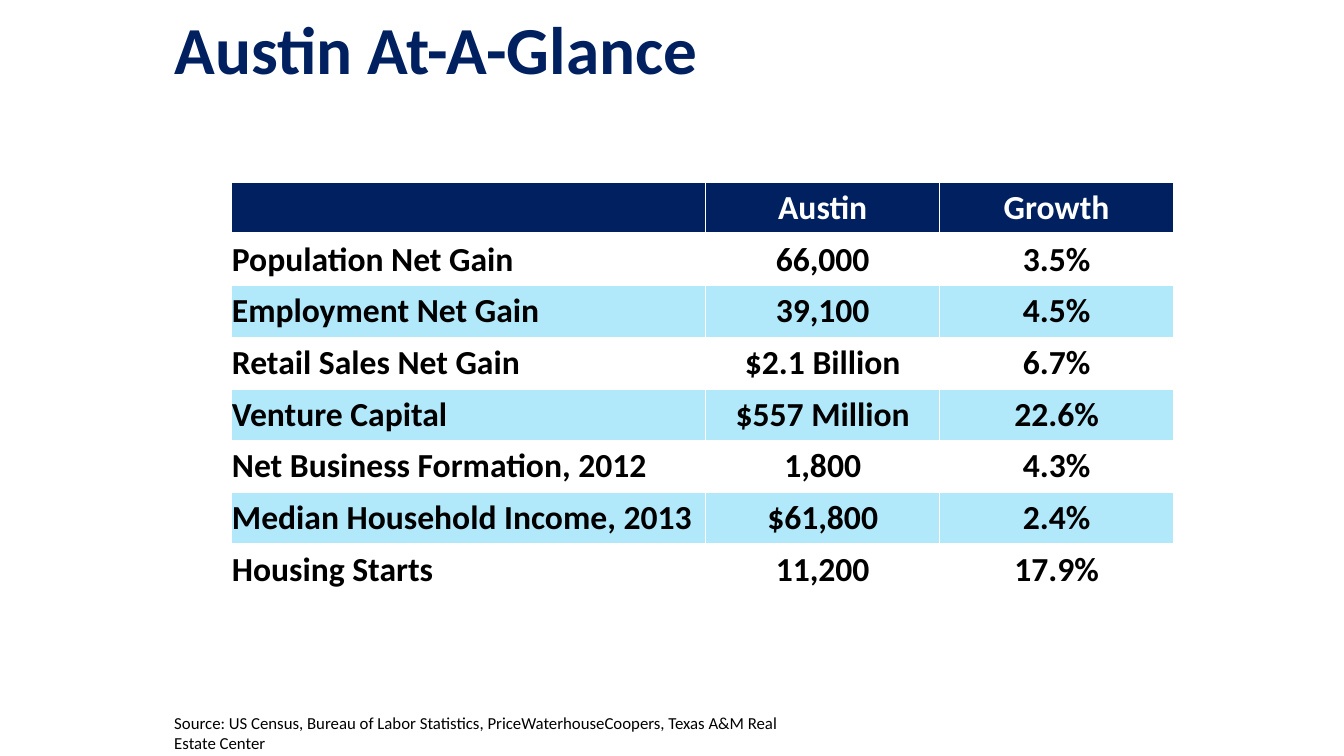
from lxml import etree
from pptx import Presentation
from pptx.dml.color import RGBColor
from pptx.enum.text import MSO_ANCHOR, PP_ALIGN
from pptx.oxml.ns import qn
from pptx.util import Emu, Pt

PX = 9144  # 100 px to the inch
FONT = "Calibri"
COLORS = {"navy": "002060", "sky": "B1E9FB", "white": "FFFFFF", "black": "000000"}
LEFT, CENTER = PP_ALIGN.LEFT, PP_ALIGN.CENTER
MIDDLE = MSO_ANCHOR.MIDDLE
TITLE_ONLY = 5

TITLE_BOX = (163, 0, 1170, 105)
TABLE_BOX = (230, 181, 934, 410)
SOURCE_BOX = (163, 702, 637, 71)
COLUMN_WIDTHS = (470, 232, 232)
ROWS = [
    ("", "Austin", "Growth"),
    ("Population Net Gain", "66,000", "3.5%"),
    ("Employment Net Gain", "39,100", "4.5%"),
    ("Retail Sales Net Gain", "$2.1 Billion", "6.7%"),
    ("Venture Capital", "$557 Million", "22.6%"),
    ("Net Business Formation, 2012", "1,800", "4.3%"),
    ("Median Household Income, 2013", "$61,800", "2.4%"),
    ("Housing Starts", "11,200", "17.9%"),
]
SOURCE = ("Source: US Census, Bureau of Labor Statistics, PriceWaterhouseCoopers, "
          "Texas A&M Real Estate Center")


def px(*lengths):
    return [Emu(length * PX) for length in lengths]


def rgb(name):
    return RGBColor.from_string(COLORS[name])


def write(frame, text, size, color="black", bold=False, align=LEFT, line_spacing=None):
    para = frame.paragraphs[0]
    para.alignment = align
    para.line_spacing = line_spacing
    span = para.add_run()
    span.text = text
    span.font.name = FONT
    span.font.size = Pt(size)
    span.font.bold = bold
    span.font.color.rgb = rgb(color)


def add_borders(cell, bottom):
    """Draw white cell borders; must run before the cell is filled."""
    properties = cell._tc.get_or_add_tcPr()
    for side, width in (("L", 1), ("R", 1), ("T", 1), ("B", bottom)):
        line = etree.SubElement(properties, qn(f"a:ln{side}"), w=str(Pt(width)))
        fill = etree.SubElement(line, qn("a:solidFill"))
        etree.SubElement(fill, qn("a:srgbClr"), val=COLORS["white"])


def add_title(page, box):
    title = page.shapes.title
    title.left, title.top, title.width, title.height = px(*box)
    title.text_frame.vertical_anchor = MIDDLE
    write(title.text_frame, "Austin At-A-Glance", 48, "navy", bold=True, line_spacing=0.9)


def style_cell(cell, text, row, column):
    header = row == 0
    add_borders(cell, bottom=3 if header else 1)
    cell.fill.solid()
    cell.fill.fore_color.rgb = rgb("navy" if header else "white" if row % 2 else "sky")
    cell.vertical_anchor = MIDDLE
    if not header:
        cell.margin_left = cell.margin_right = cell.margin_top = cell.margin_bottom = 0
    if text:
        write(cell.text_frame, text, 24, "white" if header else "black", bold=True,
              align=CENTER if header or column else LEFT)


def add_figures_table(page, box):
    table = page.shapes.add_table(len(ROWS), len(COLUMN_WIDTHS), *px(*box)).table
    for column, width in zip(table.columns, px(*COLUMN_WIDTHS)):
        column.width = width
    for row, texts in enumerate(ROWS):
        for column, text in enumerate(texts):
            style_cell(table.cell(row, column), text, row, column)


def add_source(page, box):
    frame = page.shapes.add_textbox(*px(*box)).text_frame
    frame.word_wrap = True
    write(frame, SOURCE, 12)


def main():
    deck = Presentation()
    deck.slide_width, deck.slide_height = px(1333, 750)
    page = deck.slides.add_slide(deck.slide_layouts[TITLE_ONLY])
    add_title(page, TITLE_BOX)
    add_figures_table(page, TABLE_BOX)
    add_source(page, SOURCE_BOX)
    deck.save("out.pptx")


if __name__ == "__main__":
    main()
